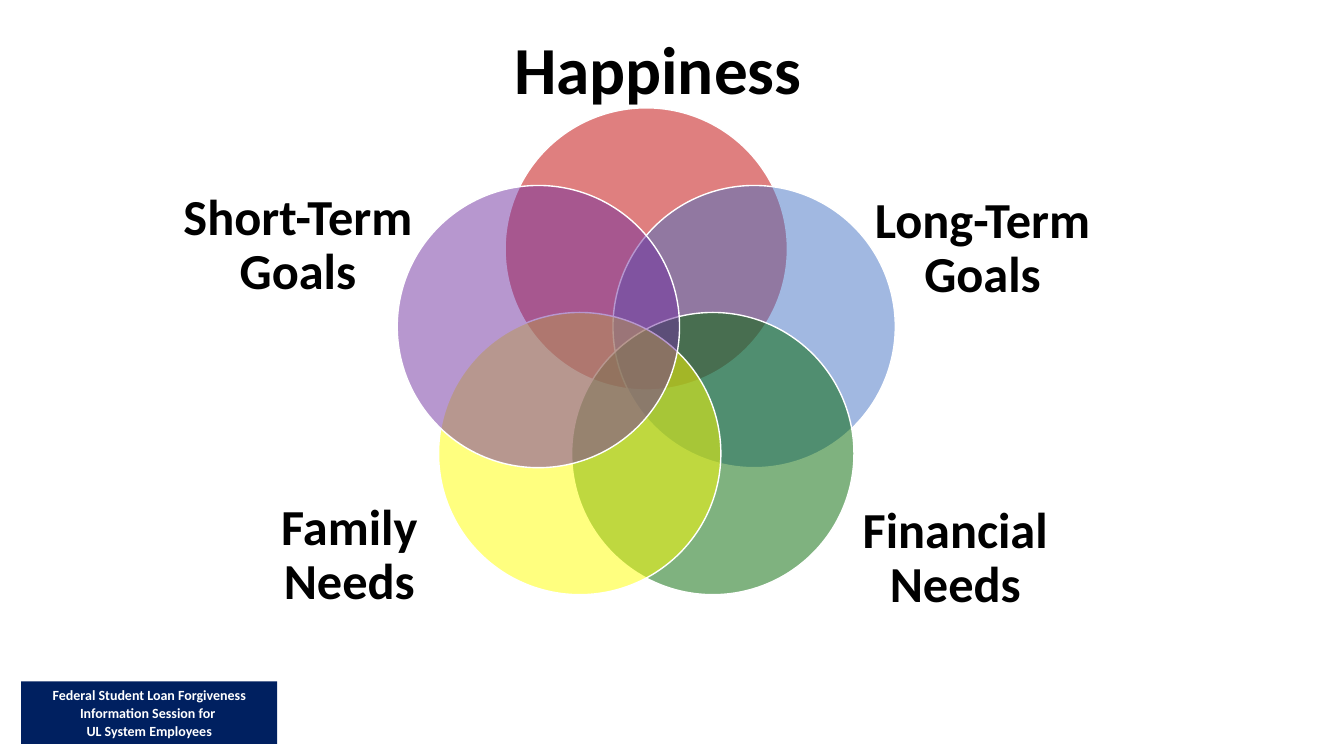
import math

from lxml import etree
from pptx import Presentation
from pptx.dml.color import RGBColor
from pptx.enum.shapes import MSO_SHAPE
from pptx.enum.text import MSO_ANCHOR, PP_ALIGN
from pptx.oxml.ns import qn
from pptx.util import Inches, Pt

OVAL = MSO_SHAPE.OVAL
RECT = MSO_SHAPE.RECTANGLE
MIDDLE = MSO_ANCHOR.MIDDLE
CENTER = PP_ALIGN.CENTER

COLORS = {
    "navy": "002060", "white": "FFFFFF", "black": "000000",
    "red": "C00000", "blue": "4472C4", "green": "006600",
    "yellow": "FFFF00", "purple": "7030A0",
}
VENN_X, VENN_Y, VENN_RADIUS = 6.41, 3.59, 1.12
DIAMETER = 2.8
GOALS_SIZE = (2.91, 2.04)
NEEDS_SIZE = (2.09, 2.04)

VENN = [
    ("Happiness", "red", 48, (4.9, -0.22), (3.25, 1.88)),
    ("Long-Term Goals", "blue", 36, (8.29, 1.45), GOALS_SIZE),
    ("Financial Needs", "green", 36, (8.43, 4.53), NEEDS_SIZE),
    ("Family Needs", "yellow", 36, (2.42, 4.5), NEEDS_SIZE),
    ("Short-Term Goals", "purple", 36, (1.5, 1.42), GOALS_SIZE),
]


def rgb(name):
    return RGBColor.from_string(COLORS[name])


def write_text(sp, text, size, color, spacing):
    tf = sp.text_frame
    tf.word_wrap = True
    tf.vertical_anchor = MIDDLE
    p = tf.paragraphs[0]
    p.text = text
    p.alignment = CENTER
    p.line_spacing = spacing
    for r in p.runs:
        for name, value in {"name": "Calibri", "size": Pt(size), "bold": True}.items():
            setattr(r.font, name, value)
        r.font.color.rgb = rgb(color)
    return tf


def add_filled(s, kind, box, color):
    sp = s.shapes.add_shape(kind, *map(Inches, box))
    sp.shadow.inherit = False
    sp.fill.solid()
    sp.fill.fore_color.rgb = rgb(color)
    return sp


def add_circle(s, index, color):
    angle = math.radians(72 * index - 90)
    x = round(VENN_X + VENN_RADIUS * math.cos(angle) - DIAMETER / 2, 2)
    y = round(VENN_Y + VENN_RADIUS * math.sin(angle) - DIAMETER / 2, 2)
    sp = add_filled(s, OVAL, (x, y, DIAMETER, DIAMETER), color)
    sp.line.color.rgb = rgb("white")
    sp.line.width = Pt(1)
    fill = sp.element.spPr.find(qn("a:solidFill"))
    etree.SubElement(fill[0], qn("a:alpha"), val="50000")


def add_label(s, text, size, place, extent):
    sp = s.shapes.add_textbox(*map(Inches, place + extent))
    tf = write_text(sp, text, size, "black", 0.9)
    for side in ("left", "top", "right", "bottom"):
        setattr(tf, f"margin_{side}", 0)


def add_banner(s, text):
    sp = add_filled(s, RECT, (0.21, 6.76, 2.54, 0.62), "navy")
    sp.line.fill.background()
    tf = write_text(sp, text, 10, "white", 1.07)
    tf.paragraphs[0].space_after = Pt(8)


def main():
    prs = Presentation()
    prs.slide_width = Inches(13.33)
    prs.slide_height = Inches(7.5)
    s = prs.slides.add_slide(prs.slide_layouts[6])
    add_banner(s, "Federal Student Loan Forgiveness Information Session for \vUL System Employees")
    for index, (text, color, size, place, extent) in enumerate(VENN):
        add_circle(s, index, color)
        add_label(s, text, size, place, extent)
    prs.save("out.pptx")


if __name__ == "__main__":
    main()
